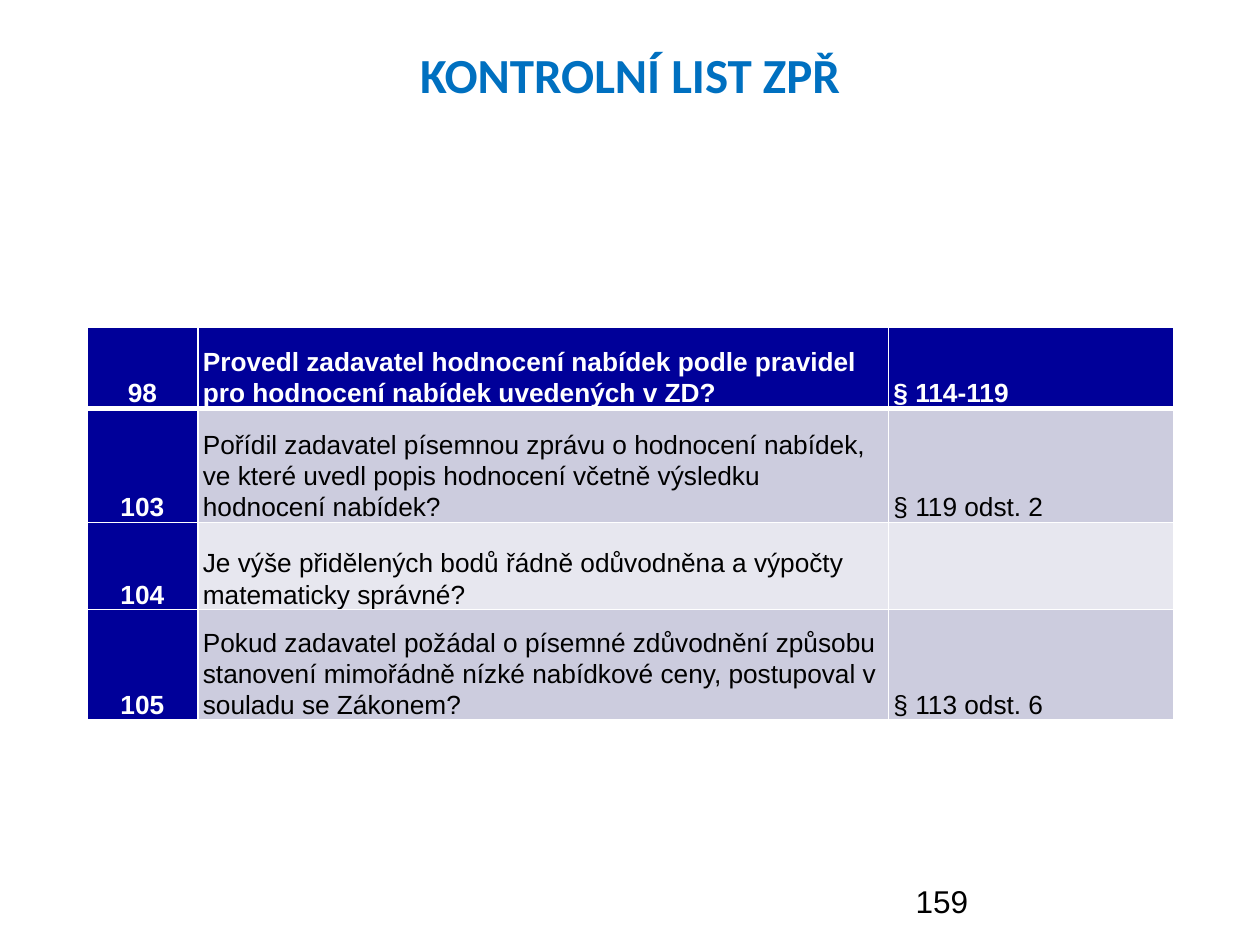
from lxml import etree
from pptx import Presentation
from pptx.dml.color import RGBColor
from pptx.enum.text import MSO_ANCHOR, PP_ALIGN
from pptx.oxml.ns import qn
from pptx.util import Cm, Pt

TOP, BOTTOM = MSO_ANCHOR.TOP, MSO_ANCHOR.BOTTOM
LEFT, CENTER = PP_ALIGN.LEFT, PP_ALIGN.CENTER
COLORS = {
    "title": "0070C0",
    "header": "000099",
    "odd": "CCCCDE",
    "even": "E7E7EF",
    "light": "FFFFFF",
    "dark": "000000",
}
COLUMN_WIDTHS = [2.24, 13.92, 5.75]
ROW_HEIGHTS = [1.63, 2.3, 1.76, 2.23]
QUESTIONS = [
    ("98", "Provedl zadavatel hodnocení nabídek podle pravidel pro hodnocení nabídek uvedených v ZD?",
     "§ 114-119"),
    ("103", "Pořídil zadavatel písemnou zprávu o hodnocení nabídek, ve které uvedl popis hodnocení "
     "včetně výsledku hodnocení nabídek?", "§ 119 odst. 2"),
    ("104", "Je výše přidělených bodů řádně odůvodněna a výpočty matematicky správné?", ""),
    ("105", "Pokud zadavatel požádal o písemné zdůvodnění způsobu stanovení mimořádně nízké "
     "nabídkové ceny, postupoval v souladu se Zákonem?", "§ 113 odst. 6"),
]


def format_paragraph(paragraph, size, color, font="Arial", bold=False, align=LEFT):
    paragraph.alignment = align
    paragraph.font.name = font
    paragraph.font.size = Pt(size)
    paragraph.font.bold = bold
    paragraph.font.color.rgb = RGBColor.from_string(COLORS[color])


def add_title(slide, text):
    title = slide.shapes.title
    title.left, title.top, title.width, title.height = Cm(1.27), Cm(0.76), Cm(22.86), Cm(3.18)
    title.text_frame.text = text
    title.text_frame.vertical_anchor = TOP
    format_paragraph(title.text_frame.paragraphs[0], 28, "title", "Calibri", True, CENTER)


def set_borders(cell, top, bottom):
    properties = cell._tc.get_or_add_tcPr()
    widths = {"a:lnL": 1, "a:lnR": 1, "a:lnT": top, "a:lnB": bottom}
    for position, (side, width) in enumerate(widths.items()):
        line = etree.Element(qn(side), w=str(Pt(width)))
        fill = etree.SubElement(line, qn("a:solidFill"))
        etree.SubElement(fill, qn("a:srgbClr"), val=COLORS["light"])
        properties.insert(position, line)


def format_cell(cell, text, row, column):
    heading = row == 0 or column == 0
    fill = "header" if heading else "odd" if row % 2 else "even"
    cell.text = text
    cell.vertical_anchor = BOTTOM
    cell.margin_left = cell.margin_right = Cm(0.1)
    cell.margin_top = cell.margin_bottom = 0
    cell.fill.solid()
    cell.fill.fore_color.rgb = RGBColor.from_string(COLORS[fill])
    paragraph = cell.text_frame.paragraphs[0]
    paragraph.line_spacing = 1.07
    format_paragraph(paragraph, 15, "light" if heading else "dark", bold=heading,
                     align=LEFT if column else CENTER)
    set_borders(cell, 3 if row == 1 else 1, 3 if row == 0 else 1)


def add_checklist(slide):
    checklist = slide.shapes.add_table(
        len(ROW_HEIGHTS), len(COLUMN_WIDTHS), Cm(1.75), Cm(6.6),
        Cm(sum(COLUMN_WIDTHS)), Cm(sum(ROW_HEIGHTS))).table
    for column, width in zip(checklist.columns, COLUMN_WIDTHS):
        column.width = Cm(width)
    for row, height in zip(checklist.rows, ROW_HEIGHTS):
        row.height = Cm(height)
    for row, question in enumerate(QUESTIONS):
        for column, text in enumerate(question):
            format_cell(checklist.cell(row, column), text, row, column)


def add_page_number(slide, number):
    page = slide.shapes.add_textbox(Cm(18.21), Cm(17.65), Cm(5.92), Cm(1.02)).text_frame
    page.word_wrap = True
    page.text = number
    format_paragraph(page.paragraphs[0], 18, "dark")


def main():
    presentation = Presentation()
    presentation.slide_width, presentation.slide_height = Cm(25.4), Cm(19.05)
    slide = presentation.slides.add_slide(presentation.slide_layouts[5])
    add_title(slide, "KONTROLNÍ LIST ZPŘ")
    add_checklist(slide)
    add_page_number(slide, "159")
    presentation.save("out.pptx")


if __name__ == "__main__":
    main()
